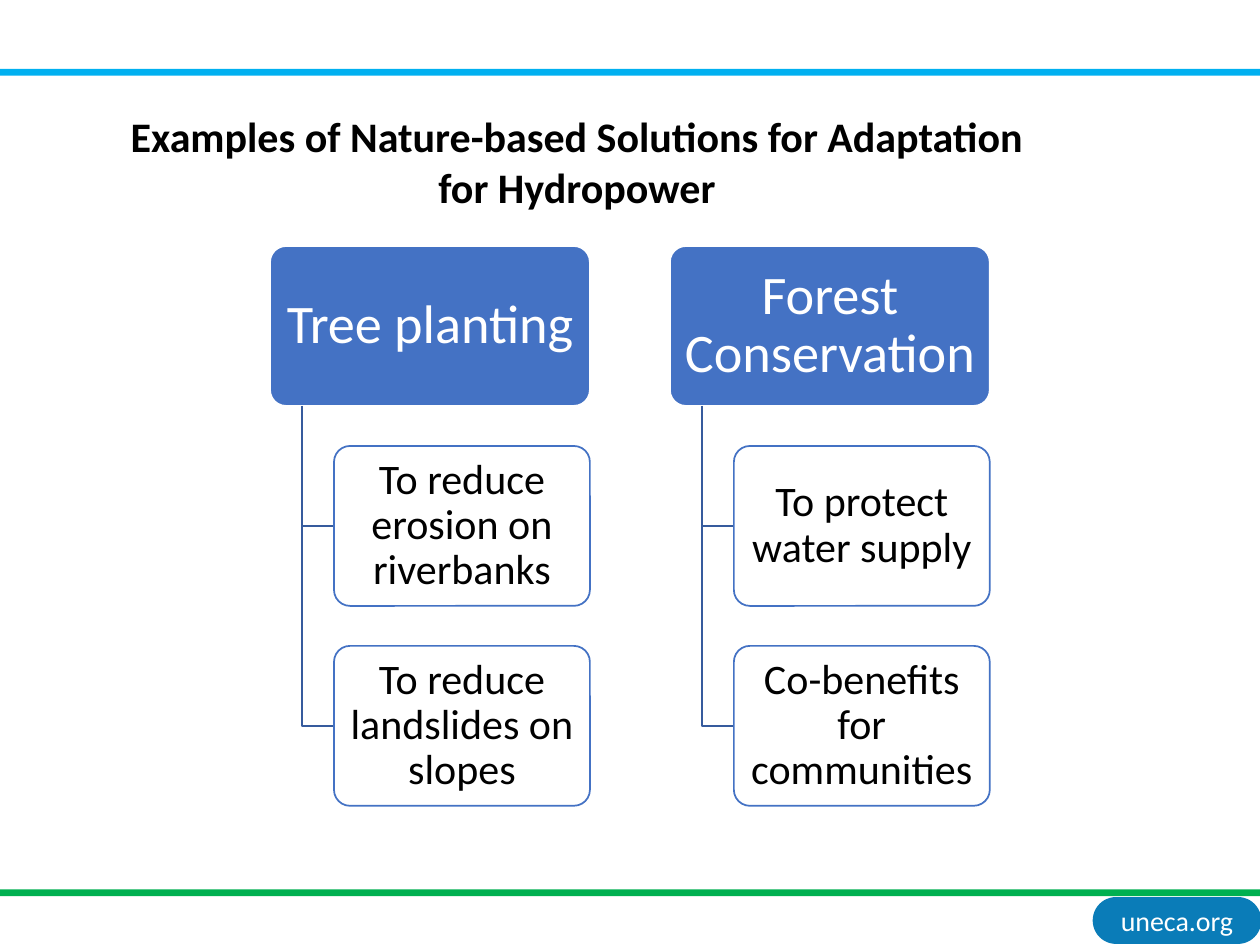
"""Build a slide of nature-based solutions for hydropower as two branching lists."""
from lxml.etree import SubElement
from pptx import Presentation
from pptx.dml.color import RGBColor
from pptx.enum.shapes import MSO_SHAPE
from pptx.enum.text import MSO_ANCHOR, MSO_AUTO_SIZE, PP_ALIGN
from pptx.oxml.ns import qn
from pptx.util import Pt

TITLE = "Examples of Nature-based Solutions for Adaptation for Hydropower"
BRANCHES = [
    ("Tree planting",
     ["To reduce erosion on riverbanks", "To reduce landslides on slopes"]),
    ("Forest Conservation",
     ["To protect water supply", "Co-benefits for communities"]),
]
WEB_ADDRESS = "uneca.org"

FONT = "Calibri"
BLACK = RGBColor(0x00, 0x00, 0x00)
WHITE = RGBColor(0xFF, 0xFF, 0xFF)
BLUE = RGBColor(0x44, 0x72, 0xC4)
ELBOW_BLUE = RGBColor(0x36, 0x5B, 0x9D)
SKY = RGBColor(0x00, 0xB0, 0xF0)
GREEN = RGBColor(0x00, 0xB0, 0x50)
BADGE_BLUE = RGBColor(0x0A, 0x7C, 0xB8)

SLIDE_WIDTH, SLIDE_HEIGHT = 720, 540
BANDS = [(39.4, SKY), (508.3, GREEN)]
BAND_HEIGHT = 3.8
TREE_LEFT, TREE_TOP = 154.3, 140.6
HEAD_WIDTH, BOX_HEIGHT = 182.8, 91.4
COLUMN_STEP = HEAD_WIDTH * 1.25
ROW_STEP = BOX_HEIGHT * 1.25
CHILD_INDENT = HEAD_WIDTH * 0.2
ELBOW_INDENT = HEAD_WIDTH * 0.1


def write(shape, text, size, color, anchor, margins, bold=False):
    frame = shape.text_frame
    frame.text = text
    frame.word_wrap = True
    frame.auto_size = MSO_AUTO_SIZE.NONE
    frame.vertical_anchor = anchor
    frame.margin_left = frame.margin_right = Pt(margins[0])
    frame.margin_top = frame.margin_bottom = Pt(margins[1])
    paragraph = frame.paragraphs[0]
    paragraph.alignment = PP_ALIGN.CENTER
    font = paragraph.runs[0].font
    font.name, font.size, font.bold = FONT, Pt(size), bold
    font.color.rgb = color
    return paragraph


def add_box(slide, kind, left, top, width, height, fill, line=None):
    shape = slide.shapes.add_shape(kind, Pt(left), Pt(top), Pt(width), Pt(height))
    shape.shadow.inherit = False
    shape.fill.solid()
    shape.fill.fore_color.rgb = fill
    if line is None:
        shape.line.fill.background()
    else:
        shape.line.color.rgb = line
        shape.line.width = Pt(1)
    return shape


def add_node(slide, text, left, top, width, fill, line, size, color, margins):
    node = add_box(slide, MSO_SHAPE.ROUNDED_RECTANGLE,
                   left, top, width, BOX_HEIGHT, fill, line)
    node.adjustments[0] = 0.1
    paragraph = write(node, text, size, color, MSO_ANCHOR.MIDDLE, margins)
    paragraph.line_spacing = 0.9
    return node


def add_elbow(slide, left, top, right, bottom):
    builder = slide.shapes.build_freeform(Pt(left), Pt(top))
    builder.add_line_segments(
        [(Pt(left), Pt(bottom)), (Pt(right), Pt(bottom))], close=False)
    elbow = builder.convert_to_shape()
    elbow.shadow.inherit = False
    elbow.fill.background()
    elbow.line.color.rgb = ELBOW_BLUE
    elbow.line.width = Pt(1)


def add_branch(slide, heading, reasons, left):
    add_node(slide, heading, left, TREE_TOP, HEAD_WIDTH,
             BLUE, WHITE, 31, WHITE, (4.4, 2.9))
    child_left = left + CHILD_INDENT
    for row, reason in enumerate(reasons, start=1):
        top = TREE_TOP + row * ROW_STEP
        add_elbow(slide, left + ELBOW_INDENT, TREE_TOP + BOX_HEIGHT,
                  child_left, top + BOX_HEIGHT / 2)
        child = add_node(slide, reason, child_left, top, HEAD_WIDTH - CHILD_INDENT,
                         WHITE, BLUE, 24, BLACK, (3.6, 2.2))
        color = child.fill._xPr.find(qn("a:solidFill"))[0]
        SubElement(color, qn("a:alpha"), val="90000")


def main():
    presentation = Presentation()
    presentation.slide_width = Pt(SLIDE_WIDTH)
    presentation.slide_height = Pt(SLIDE_HEIGHT)
    slide = presentation.slides.add_slide(presentation.slide_layouts[5])

    badge = add_box(slide, MSO_SHAPE.ROUNDED_RECTANGLE,
                    624.4, 512.6, 96.4, 26.8, BADGE_BLUE)
    badge.adjustments[0] = 0.5
    write(badge, WEB_ADDRESS, 16, WHITE, MSO_ANCHOR.MIDDLE, (0, 0))
    for top, color in BANDS:
        add_box(slide, MSO_SHAPE.RECTANGLE, 0, top, SLIDE_WIDTH, BAND_HEIGHT, color)

    title = slide.shapes.title
    title.left, title.top = Pt(59), Pt(59.8)
    title.width, title.height = Pt(541.4), Pt(65.5)
    write(title, TITLE, 24, BLACK, MSO_ANCHOR.TOP, (7.2, 3.6), bold=True)

    for column, (heading, reasons) in enumerate(BRANCHES):
        add_branch(slide, heading, reasons, TREE_LEFT + column * COLUMN_STEP)

    presentation.save("out.pptx")


if __name__ == "__main__":
    main()
